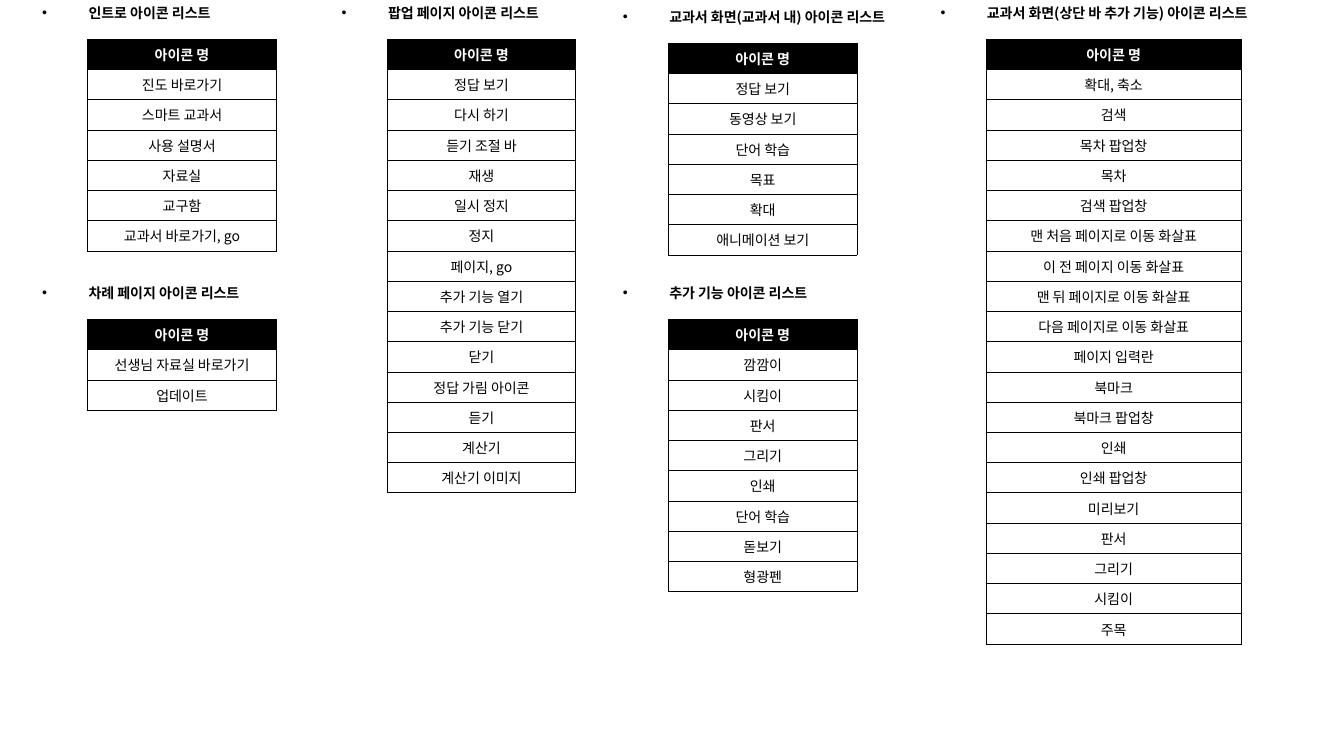
from lxml import etree
from pptx import Presentation
from pptx import util as u
from pptx.dml.color import RGBColor
from pptx.enum import text
from pptx.oxml.ns import qn

BLACK = RGBColor(0x00, 0x00, 0x00)
WHITE = RGBColor(0xFF, 0xFF, 0xFF)
FONT = "Noto Sans CJK KR"
HEADER = "아이콘 명"
ROW_H = 0.3
INDENT = 0.46
TABLE_DX, TABLE_DY = 0.55, 0.37

ICON_LISTS = [
    (0.32, 0.02, 2.42, 1.87, "인트로 아이콘 리스트",
     ["진도 바로가기", "스마트 교과서", "사용 설명서", "자료실", "교구함",
      "교과서 바로가기, go"]),
    (0.32, 2.8, 2.42, 1.87, "차례 페이지 아이콘 리스트",
     ["선생님 자료실 바로가기", "업데이트"]),
    (3.29, 0.02, 2.42, 1.87, "팝업 페이지 아이콘 리스트",
     ["정답 보기", "다시 하기", "듣기 조절 바", "재생", "일시 정지", "정지",
      "페이지, go", "추가 기능 열기", "추가 기능 닫기", "닫기",
      "정답 가림 아이콘", "듣기", "계산기", "계산기 이미지"]),
    (6.08, 2.8, 2.42, 1.87, "추가 기능 아이콘 리스트",
     ["깜깜이", "시킴이", "판서", "그리기", "인쇄", "단어 학습", "돋보기", "형광펜"]),
    (6.08, 0.06, 3.15, 1.87, "교과서 화면(교과서 내) 아이콘 리스트",
     ["정답 보기", "동영상 보기", "단어 학습", "목표", "확대", "애니메이션 보기"]),
    (9.23, 0.02, 3.78, 2.53, "교과서 화면(상단 바 추가 기능) 아이콘 리스트",
     ["확대, 축소", "검색", "목차 팝업창", "목차", "검색 팝업창",
      "맨 처음 페이지로 이동 화살표", "이 전 페이지 이동 화살표",
      "맨 뒤 페이지로 이동 화살표", "다음 페이지로 이동 화살표", "페이지 입력란",
      "북마크", "북마크 팝업창", "인쇄", "인쇄 팝업창", "미리보기", "판서",
      "그리기", "시킴이", "주목"]),
]


class IconSlide:
    def __init__(self, slide):
        self.s = slide
        self.font = {"name": FONT, "size": u.Pt(10)}

    def add_text(self, p, words, color, bold):
        r = p.add_run()
        r.text = words
        for name, value in {**self.font, "bold": bold}.items():
            setattr(r.font, name, value)
        r.font.color.rgb = color
        ea = etree.SubElement(r._r.get_or_add_rPr(), qn("a:ea"))
        ea.set("typeface", FONT)

    def heading(self, x, y, w, words):
        sp = self.s.shapes.add_textbox(
            u.Inches(x), u.Inches(y), u.Inches(w), u.Inches(TABLE_DY))
        tf = sp.text_frame
        for name, value in {"word_wrap": True, "margin_top": u.Inches(0.02)}.items():
            setattr(tf, name, value)
        p = tf.paragraphs[0]
        pPr = p._p.get_or_add_pPr()
        pPr.set("marL", str(u.Inches(INDENT)))
        pPr.set("indent", str(-u.Inches(INDENT)))
        etree.SubElement(pPr, qn("a:buFont")).set("typeface", "Arial")
        etree.SubElement(pPr, qn("a:buChar")).set("char", "•")
        self.add_text(p, words, BLACK, True)

    def border(self, cell):
        tcPr = cell._tc.get_or_add_tcPr()
        for side in ("a:lnL", "a:lnR", "a:lnT", "a:lnB"):
            ln = etree.SubElement(tcPr, qn(side), w=str(u.Pt(0.75)))
            fill = etree.SubElement(ln, qn("a:solidFill"))
            etree.SubElement(fill, qn("a:srgbClr")).set("val", str(BLACK))

    def table(self, x, y, w, names):
        rows = [HEADER, *names]
        tbl = self.s.shapes.add_table(
            len(rows), 1, u.Inches(x), u.Inches(y),
            u.Inches(w), u.Inches(ROW_H * len(rows))).table
        tbl.horz_banding = False
        for i, words in enumerate(rows):
            tbl.rows[i].height = u.Inches(ROW_H)
            cell = tbl.cell(i, 0)
            self.border(cell)
            cell.fill.solid()
            cell.fill.fore_color.rgb = WHITE if i else BLACK
            cell.vertical_anchor = text.MSO_ANCHOR.MIDDLE
            p = cell.text_frame.paragraphs[0]
            p.alignment = text.PP_ALIGN.CENTER
            self.add_text(p, words, BLACK if i else WHITE, i == 0)


def main():
    prs = Presentation()
    prs.slide_width, prs.slide_height = u.Inches(13.33), u.Inches(7.5)
    page = IconSlide(prs.slides.add_slide(prs.slide_layouts[6]))
    for x, y, heading_w, table_w, words, names in ICON_LISTS:
        page.heading(x, y, heading_w, words)
        page.table(x + TABLE_DX, y + TABLE_DY, table_w, names)
    prs.save("out.pptx")


if __name__ == "__main__":
    main()
